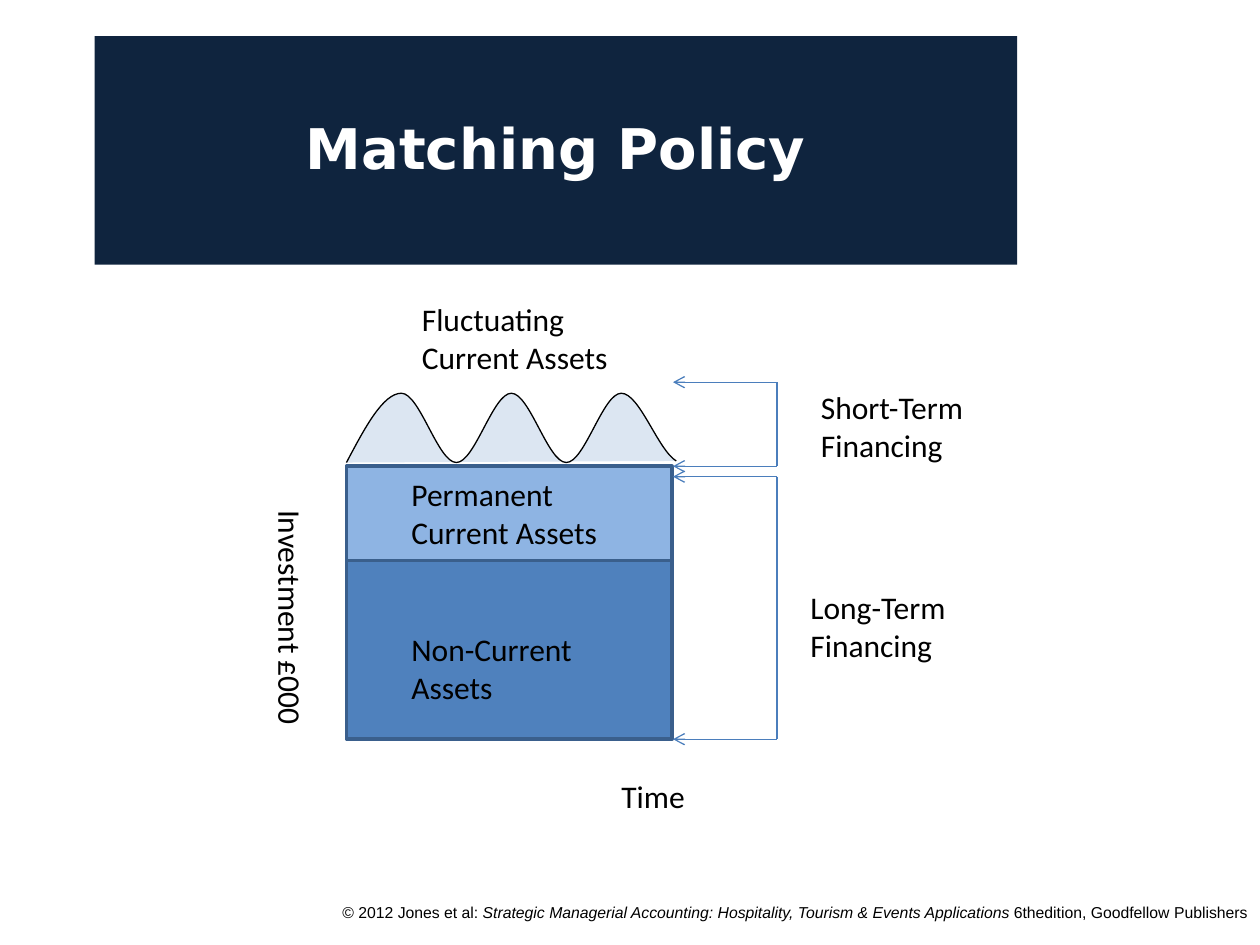
"""Build the Matching Policy slide: asset layers against their sources of finance."""
from lxml import etree
from pptx import Presentation, util as u
from pptx.dml.color import RGBColor
from pptx.enum import shapes, text
from pptx.oxml.ns import qn

THEME = {
    "banner": "0F243E", "banner_text": "FFFFFF", "ink": "000000",
    "non_current": "4F81BD", "permanent": "8EB4E3", "fluctuating": "DCE6F2",
    "outline": "3A5F8C", "bracket": "4B7EBC",
    "title_size": 32, "label_size": 18, "credit_size": 9,
    "title_font": "DejaVu Sans", "label_font": "Calibri", "credit_font": "Arial",
}
COLUMNS = 120


def grid(*cells):
    return [round(cell * deck.slide_width / COLUMNS) for cell in cells]


def write(frame, *runs, size="label_size", font="label_font", color="ink", bold=False,
          align=text.PP_ALIGN.LEFT, grow=True, vertical=False):
    frame.word_wrap = True
    frame.auto_size = text.MSO_AUTO_SIZE.SHAPE_TO_FIT_TEXT if grow else text.MSO_AUTO_SIZE.NONE
    if vertical:
        frame._txBody.bodyPr.set("vert", "vert")
    paragraph = frame.paragraphs[0]
    paragraph.alignment = align
    for words, italic in runs:
        run = paragraph.add_run()
        run.text = words
        run.font.name, run.font.size = THEME[font], u.Pt(THEME[size])
        run.font.bold, run.font.italic = bold, italic
        run.font.color.rgb = RGBColor.from_string(THEME[color])


deck = Presentation()
deck.slide_width, deck.slide_height = u.Inches(10), u.Inches(7.5)
slide = deck.slides.add_slide(deck.slide_layouts[5])
canvas = slide.shapes

title = canvas.title
title.left, title.top, title.width, title.height = grid(9, 3.45, 87.87, 21.75)
title.fill.solid()
title.fill.fore_color.rgb = RGBColor.from_string(THEME["banner"])
title.text_frame.vertical_anchor = text.MSO_ANCHOR.MIDDLE
title.text_frame.margin_bottom = u.Inches(0.1)
write(title.text_frame, ("Matching Policy", False), size="title_size", font="title_font",
      color="banner_text", bold=True, align=text.PP_ALIGN.CENTER, grow=False)

credit = canvas.add_textbox(*grid(26.75, 85.35, 93.25, 4.65))
write(credit.text_frame, ("© 2012 Jones et al: ", False),
      ("Strategic Managerial Accounting: Hospitality, Tourism & Events Applications ", True),
      ("6thedition, Goodfellow Publishers", False),
      size="credit_size", font="credit_font", align=text.PP_ALIGN.RIGHT, grow=False)

left, right, bracket_x, arrow_x = 33, 64, 74, 64.1
finance_top = 36.4
permanent_top = finance_top + 8
non_current_top = permanent_top + 9
base = non_current_top + 17

for layer, top, bottom in (("non_current", non_current_top, base),
                           ("permanent", permanent_top, non_current_top)):
    block = canvas.add_shape(shapes.MSO_SHAPE.RECTANGLE,
                             *grid(left, top, right - left, bottom - top))
    block.shadow.inherit = False
    block.fill.solid()
    block.fill.fore_color.rgb = RGBColor.from_string(THEME[layer])
    block.line.color.rgb = RGBColor.from_string(THEME["outline"])
    block.line.width = u.Pt(2)

crest, trough, third = 37.45, 44.05, 1.745
levels = [trough, (crest + trough) / 2, crest, crest, crest, trough, trough,
          trough, crest, crest, crest, trough, trough,
          trough, crest, crest, crest, 42.85, 43.9]
curve = [grid(left + step * third, level) for step, level in enumerate(levels)]
builder = canvas.build_freeform(*curve[0])
builder.add_line_segments(curve[1:], close=False)
wave = builder.convert_to_shape()
outline = next(wave._element.iter(qn("a:path")))
handles = [point for segment in outline.findall(qn("a:lnTo")) for point in segment]
for segment in outline.findall(qn("a:lnTo")):
    outline.remove(segment)
for start in range(0, len(handles), 3):
    etree.SubElement(outline, qn("a:cubicBezTo")).extend(handles[start:start + 3])
wave.shadow.inherit = False
wave.fill.solid()
wave.fill.fore_color.rgb = RGBColor.from_string(THEME["fluctuating"])
wave.line.color.rgb = RGBColor.from_string(THEME["ink"])
wave.line.width = u.Pt(0.75)

for top, bottom in ((permanent_top + 1, base), (finance_top, permanent_top)):
    for end_x, start_y, end_y, has_arrow in ((arrow_x, bottom, bottom, True),
                                             (arrow_x, top, top, True),
                                             (bracket_x, top, bottom, False)):
        edge = canvas.add_connector(shapes.MSO_CONNECTOR.STRAIGHT,
                                    *grid(bracket_x, start_y, end_x, end_y))
        edge.line.color.rgb = RGBColor.from_string(THEME["bracket"])
        edge.line.width = u.Pt(0.75)
        if has_arrow:
            etree.SubElement(edge.line._get_or_add_ln(), qn("a:tailEnd"), type="arrow")
        etree.SubElement(edge._element.spPr, qn("a:effectLst"))

for words, column, row, width, height in (
        ("Time", 58, 73.4, 13, 4.8),
        ("Investment £000", 24, 47.4, 6.1, 23),
        ("Non-Current Assets", 38, 59.4, 22, 8.5),
        ("Permanent Current Assets", 38, 44.65, 22, 8.5),
        ("Fluctuating Current Assets", 39, 28, 23, 8.5),
        ("Long-Term Financing", 76, 55.4, 24, 8.5),
        ("Short-Term Financing", 77, 36.4, 22, 8.5)):
    label = canvas.add_textbox(*grid(column, row, width, height))
    write(label.text_frame, (words, False), vertical=height > width)

deck.save("out.pptx")
